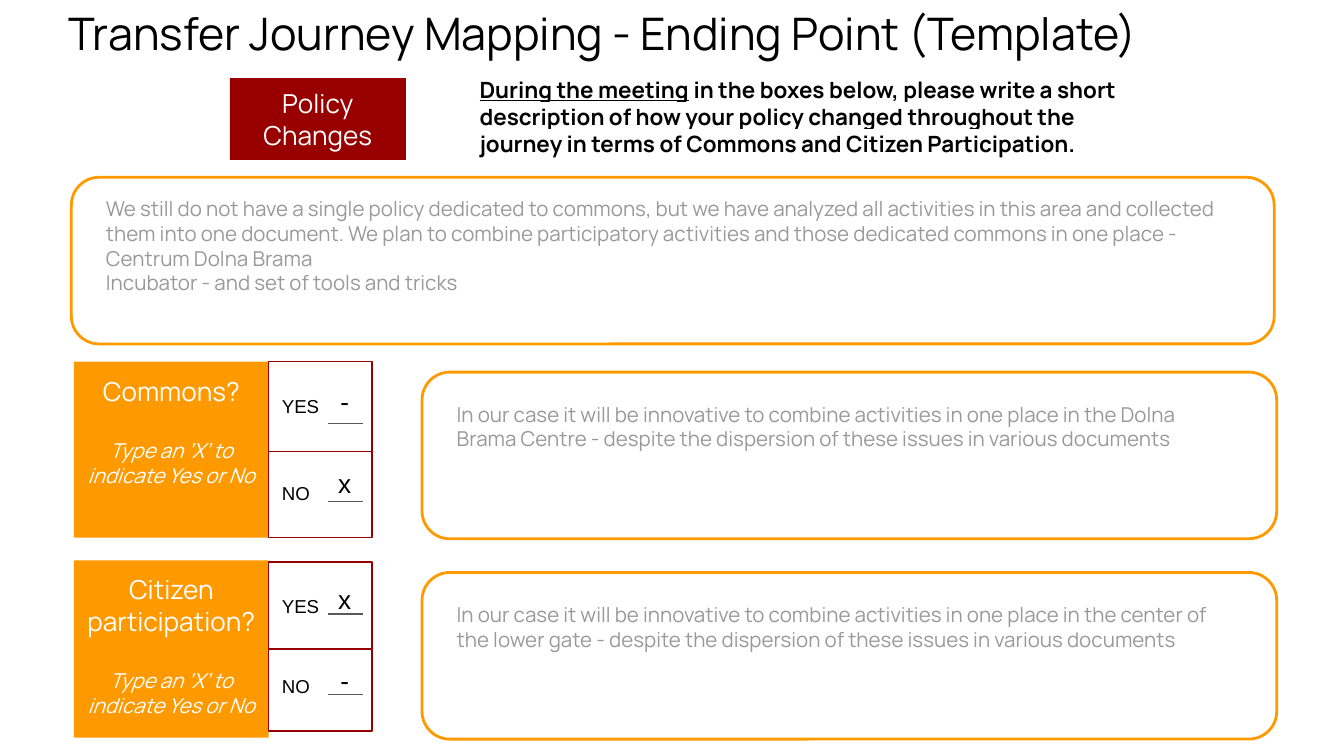
from lxml import etree
from pptx import Presentation
from pptx.dml.color import RGBColor
from pptx.enum.shapes import MSO_CONNECTOR, MSO_SHAPE
from pptx.enum.text import MSO_ANCHOR, MSO_AUTO_SIZE, PP_ALIGN
from pptx.oxml.ns import qn
from pptx.util import Pt

RECT, ROUND = MSO_SHAPE.RECTANGLE, MSO_SHAPE.ROUNDED_RECTANGLE
STRAIGHT = MSO_CONNECTOR.STRAIGHT
TOP, MIDDLE = MSO_ANCHOR.TOP, MSO_ANCHOR.MIDDLE
LEFT, CENTER = PP_ALIGN.LEFT, PP_ALIGN.CENTER
NO_FIT = MSO_AUTO_SIZE.NONE

COLORS = {
    "black": "000000", "white": "FFFFFF", "red": "980000",
    "orange": "FF9900", "answer": "999999", "rule": "595959",
}
HEADING_FONT, CHOICE_FONT = "Manrope", "Arial"
INSET = 7.2
HINT = "Type an ‘X’ to indicate Yes or No"

# Each question: label, block top and height, answer box top, answer text top,
# and its choices as (word, box top, box height, rule y, mark top, mark)
QUESTIONS = [
    {
        "label": "Commons?", "top": 193.7, "height": 94.3,
        "answer_top": 199.4, "text_top": 208.1,
        "answer": "In our case it will be innovative to combine activities in one "
                  "place in the Dolna Brama Centre - despite the dispersion of "
                  "these issues in various documents",
        "choices": [("NO", 239.8, 48.2, 268.6, 243.4, "x"),
                    ("YES", 193.7, 48.2, 226.8, 199.4, "-")],
    },
    {
        "label": "Citizen participation?", "top": 300.2, "height": 95,
        "answer_top": 306.7, "text_top": 315.4,
        "answer": "In our case it will be innovative to combine activities in one "
                  "place in the center of the lower gate - despite the dispersion "
                  "of these issues in various documents",
        "choices": [("NO", 343.4, 48.2, 372.2, 348.5, "-"),
                    ("YES", 301, 46.8, 329, 305.3, "x")],
    },
]


def rgb(name):
    return RGBColor.from_string(COLORS[name])


def area(left, top, width, height):
    return Pt(left), Pt(top), Pt(width), Pt(height)


def prepare_frame(frame, anchor=TOP):
    frame.word_wrap = True
    frame.auto_size = NO_FIT
    frame.vertical_anchor = anchor
    frame.margin_left = frame.margin_right = Pt(INSET)
    frame.margin_top = frame.margin_bottom = Pt(INSET)


def add_span(para, text, size, color="black", font=HEADING_FONT,
             bold=False, italic=False, underline=False):
    span = para.add_run()
    span.text = text
    span.font.size = Pt(size)
    span.font.name = font
    span.font.bold = bold
    span.font.italic = italic
    span.font.underline = underline
    span.font.color.rgb = rgb(color)
    return span


def highlight(span, color):
    fill = span.font._element.find(qn("a:solidFill"))
    mark = etree.Element(qn("a:highlight"))
    etree.SubElement(mark, qn("a:srgbClr")).set("val", COLORS[color])
    fill.addnext(mark)


def add_text(slide, place, lines, size, color="black", font=HEADING_FONT, align=LEFT):
    box = slide.shapes.add_textbox(*area(*place))
    frame = box.text_frame
    prepare_frame(frame)
    for index, line in enumerate(lines):
        para = frame.add_paragraph() if index else frame.paragraphs[0]
        para.alignment = align
        add_span(para, line, size, color, font)
    return frame


def add_box(slide, kind, place, fill=None, line=None, weight=0.75, anchor=TOP):
    box = slide.shapes.add_shape(kind, *area(*place))
    box.shadow.inherit = False
    if fill:
        box.fill.solid()
        box.fill.fore_color.rgb = rgb(fill)
    else:
        box.fill.background()
    if line:
        box.line.color.rgb = rgb(line)
        box.line.width = Pt(weight)
    else:
        box.line.fill.background()
    prepare_frame(box.text_frame, anchor)
    return box


def add_label(box, text, size, color, font=HEADING_FONT, align=CENTER):
    para = box.text_frame.paragraphs[0]
    para.alignment = align
    add_span(para, text, size, color, font)


def add_outline(slide, place):
    box = add_box(slide, ROUND, place, line="orange", weight=1.5)
    box.adjustments[0] = 0.167


def add_rule(slide, y):
    rule = slide.shapes.add_connector(STRAIGHT, Pt(175.8), Pt(y), Pt(194.5), Pt(y))
    rule.line.color.rgb = rgb("rule")
    rule.line.width = Pt(0.75)
    etree.SubElement(rule._element.spPr, qn("a:effectLst"))


def add_title(slide, text):
    title = slide.shapes.title
    title.left, title.top, title.width, title.height = area(29.5, -4.3, 657.4, 54)
    prepare_frame(title.text_frame)
    para = title.text_frame.paragraphs[0]
    para.alignment = LEFT
    add_span(para, text, 24)


def add_instruction(slide):
    frame = add_text(slide, (249.8, 33.8, 365.8, 54), [], 12)
    para = frame.paragraphs[0]
    spans = [
        add_span(para, "During the meeting", 12, bold=True, underline=True),
        add_span(para, " in the boxes below, please write a short description of how "
                 "your policy changed throughout the journey in terms of Commons "
                 "and Citizen Participation.", 12, bold=True),
    ]
    for span in spans:
        highlight(span, "white")


def add_question(slide, question):
    # Question block with its hint
    block = add_box(slide, RECT, (39.6, question["top"], 104.4, question["height"]),
                    fill="orange")
    add_label(block, question["label"], 14, "white")
    hint = block.text_frame.add_paragraph()
    hint.alignment = CENTER
    hint.space_before = Pt(17)
    add_span(hint, HINT, 11, "white", italic=True)

    # Yes and no choices
    for word, top, height, rule_y, mark_top, mark in question["choices"]:
        choice = add_box(slide, RECT, (144, top, 55.4, height),
                         fill="white", line="red", anchor=MIDDLE)
        add_label(choice, word, 10, "black", CHOICE_FONT, LEFT)
    for word, top, height, rule_y, mark_top, mark in question["choices"]:
        add_rule(slide, rule_y)
        add_text(slide, (170.6, mark_top, 28.1, 34.6), [mark], 14,
                 font=CHOICE_FONT, align=CENTER)

    # Written answer
    add_outline(slide, (226.1, question["answer_top"], 457.9, 89.3))
    add_text(slide, (237.6, question["text_top"], 432, 76.3),
             [question["answer"]], 11, "answer")


def main():
    deck = Presentation()
    deck.slide_width, deck.slide_height = Pt(720), Pt(405)
    slide = deck.slides.add_slide(deck.slide_layouts[5])

    # Heading area
    add_title(slide, "Transfer Journey Mapping - Ending Point (Template)")
    add_instruction(slide)
    policy = add_box(slide, RECT, (123.1, 41.8, 94.3, 43.9), fill="red", anchor=MIDDLE)
    add_label(policy, "Policy Changes", 14, "white")

    # Policy description
    add_outline(slide, (38.2, 95, 644.4, 89.3))
    add_text(slide, (49.7, 97.9, 617.8, 79.9), [
        "We still do not have a single policy dedicated to commons, but we have "
        "analyzed all activities in this area and collected them into one document. "
        "We plan to combine participatory activities and those dedicated commons in "
        "one place - Centrum Dolna Brama",
        "Incubator - and set of tools and tricks",
    ], 11, "answer")

    # Questions
    for question in QUESTIONS:
        add_question(slide, question)

    deck.save("out.pptx")


if __name__ == "__main__":
    main()
